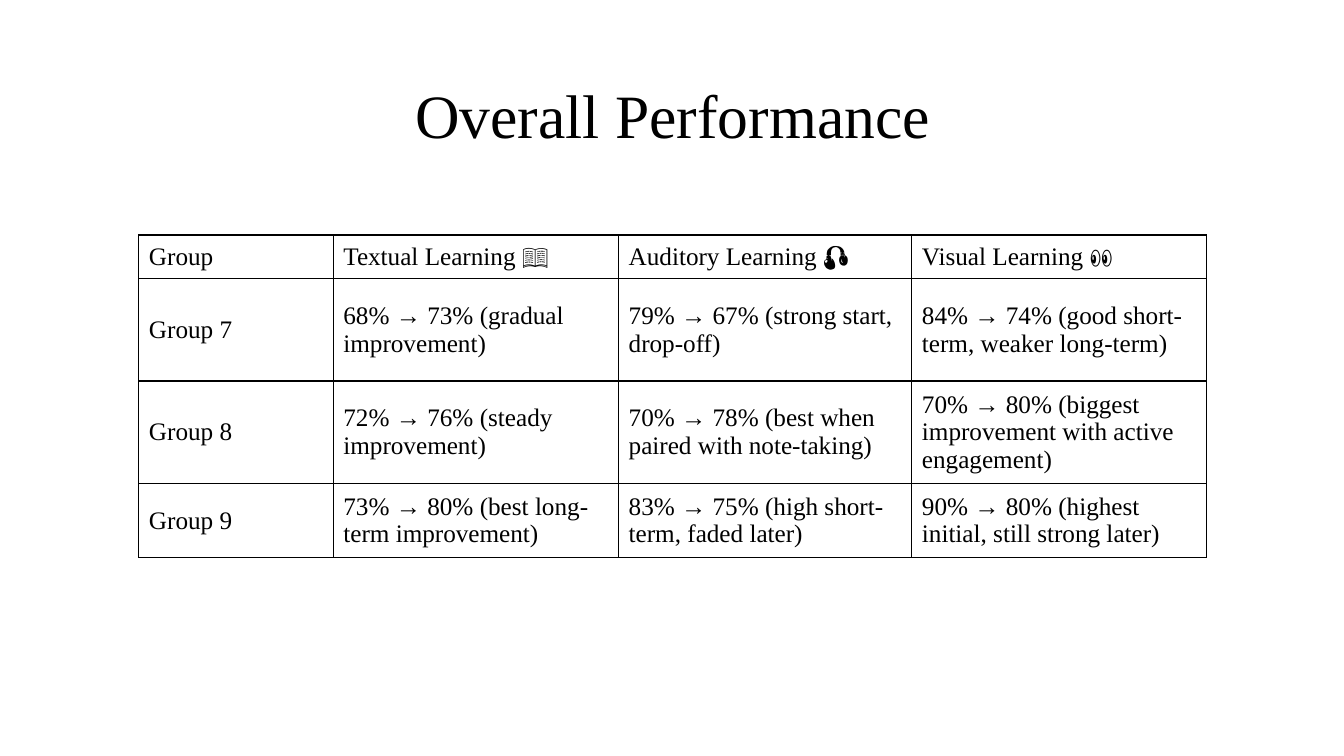
from lxml import etree
from pptx import Presentation
from pptx.dml.color import RGBColor
from pptx.enum.text import MSO_ANCHOR, PP_ALIGN
from pptx.oxml.ns import qn
from pptx.util import Cm, Pt

CENTER = PP_ALIGN.CENTER
TOP, MIDDLE = MSO_ANCHOR.TOP, MSO_ANCHOR.MIDDLE

FONT = "Times New Roman"
COLORS = {"text": "000000", "border": "000000", "background": "FFFFFF"}
BLANK_LAYOUT = 6

COLUMN_WIDTHS = [4.9, 7.19, 7.39, 7.42]
ROW_HEIGHTS = [1.09, 2.59, 2.59, 1.85]
RESULTS = [
    ["Group", "Textual Learning 📖", "Auditory Learning 🎧", "Visual Learning 👀"],
    ["Group 7", "68% → 73% (gradual improvement)",
     "79% → 67% (strong start, drop-off)",
     "84% → 74% (good short-term, weaker long-term)"],
    ["Group 8", "72% → 76% (steady improvement)",
     "70% → 78% (best when paired with note-taking)",
     "70% → 80% (biggest improvement with active engagement)"],
    ["Group 9", "73% → 80% (best long-term improvement)",
     "83% → 75% (high short-term, faded later)",
     "90% → 80% (highest initial, still strong later)"],
]


def write_text(frame, text, size):
    paragraph = frame.paragraphs[0]
    paragraph.text = text
    paragraph.font.name = FONT
    paragraph.font.size = Pt(size)
    paragraph.font.color.rgb = RGBColor.from_string(COLORS["text"])
    return paragraph


def add_title(slide, text):
    title = slide.shapes.add_textbox(Cm(3.84), Cm(2.03), Cm(26.24), Cm(2.64))
    title.text_frame.word_wrap = True
    title.text_frame.vertical_anchor = TOP
    paragraph = write_text(title.text_frame, text, 44)
    paragraph.alignment = CENTER
    paragraph.line_spacing = 0.9


def add_borders(cell):
    properties = cell._tc.get_or_add_tcPr()
    # Border lines must come before the cell fill
    for position, side in enumerate(("a:lnL", "a:lnR", "a:lnT", "a:lnB")):
        line = etree.Element(qn(side), w=str(Pt(1)))
        fill = etree.SubElement(line, qn("a:solidFill"))
        etree.SubElement(fill, qn("a:srgbClr"), val=COLORS["border"])
        properties.insert(position, line)


def fill_cell(cell, text):
    cell.vertical_anchor = MIDDLE
    cell.fill.solid()
    cell.fill.fore_color.rgb = RGBColor.from_string(COLORS["background"])
    write_text(cell.text_frame, text, 18)
    add_borders(cell)


def add_results_table(slide, results):
    results_table = slide.shapes.add_table(
        len(results), len(results[0]), Cm(3.5), Cm(5.92),
        Cm(sum(COLUMN_WIDTHS)), Cm(sum(ROW_HEIGHTS))).table
    results_table.first_row = False
    results_table.horz_banding = False
    for column, width in zip(results_table.columns, COLUMN_WIDTHS):
        column.width = Cm(width)
    for row, height, texts in zip(results_table.rows, ROW_HEIGHTS, results):
        row.height = Cm(height)
        for cell, text in zip(row.cells, texts):
            fill_cell(cell, text)


def main():
    presentation = Presentation()
    presentation.slide_width = Cm(33.87)
    presentation.slide_height = Cm(19.05)
    slide = presentation.slides.add_slide(presentation.slide_layouts[BLANK_LAYOUT])

    # Heading
    add_title(slide, "Overall Performance")

    # Scores by group and learning style
    add_results_table(slide, RESULTS)

    presentation.save("out.pptx")


if __name__ == "__main__":
    main()
